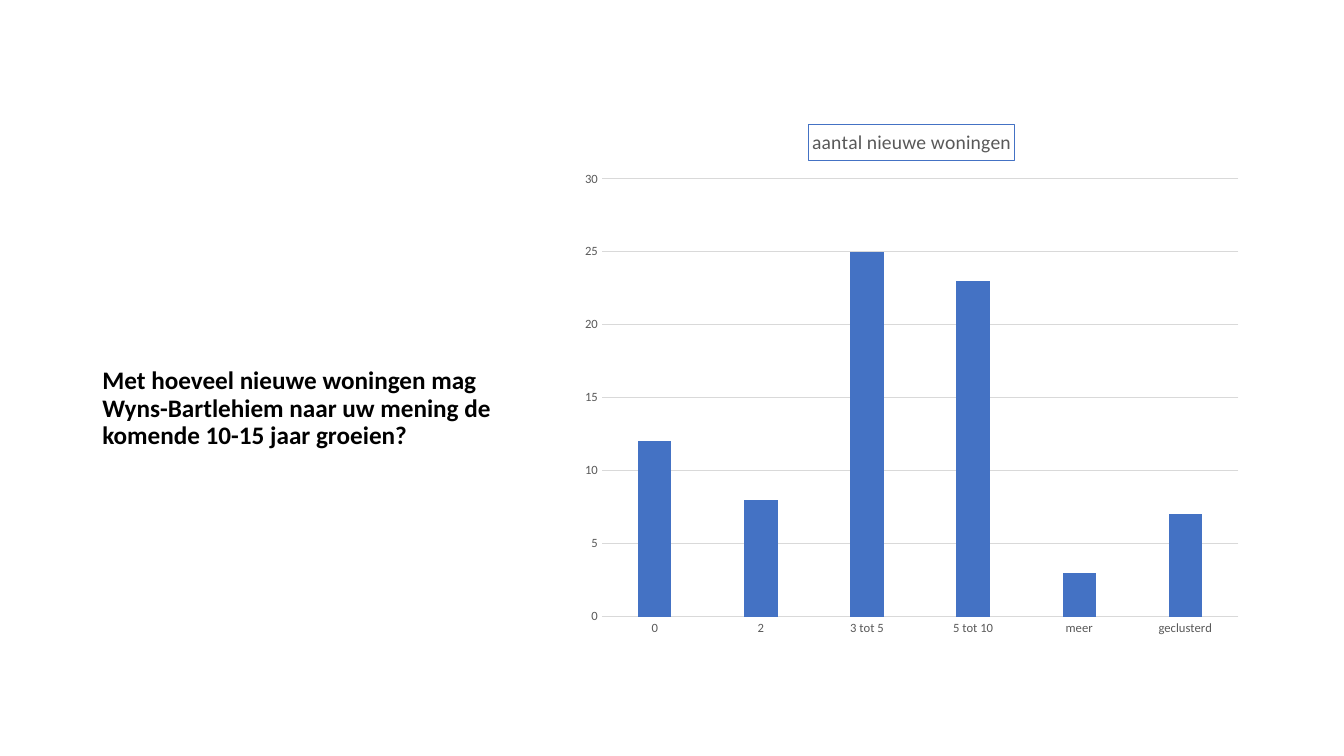
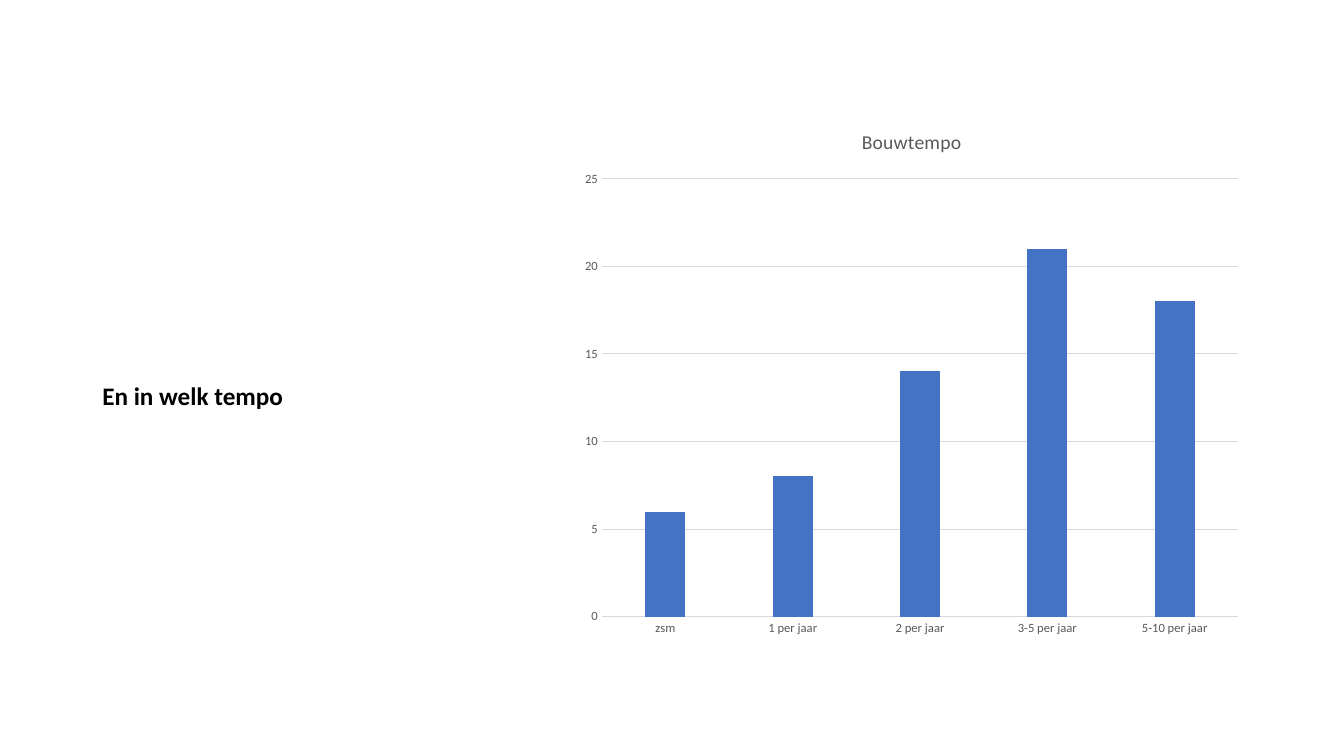
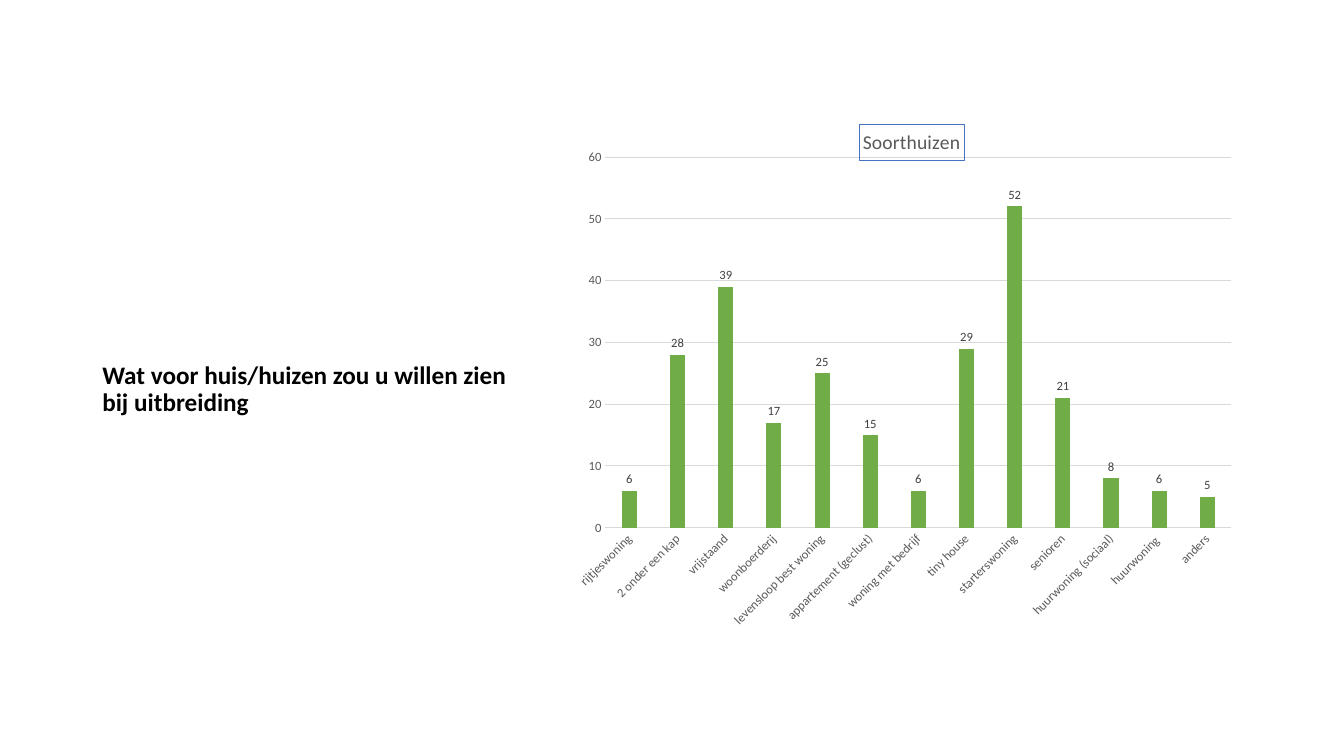
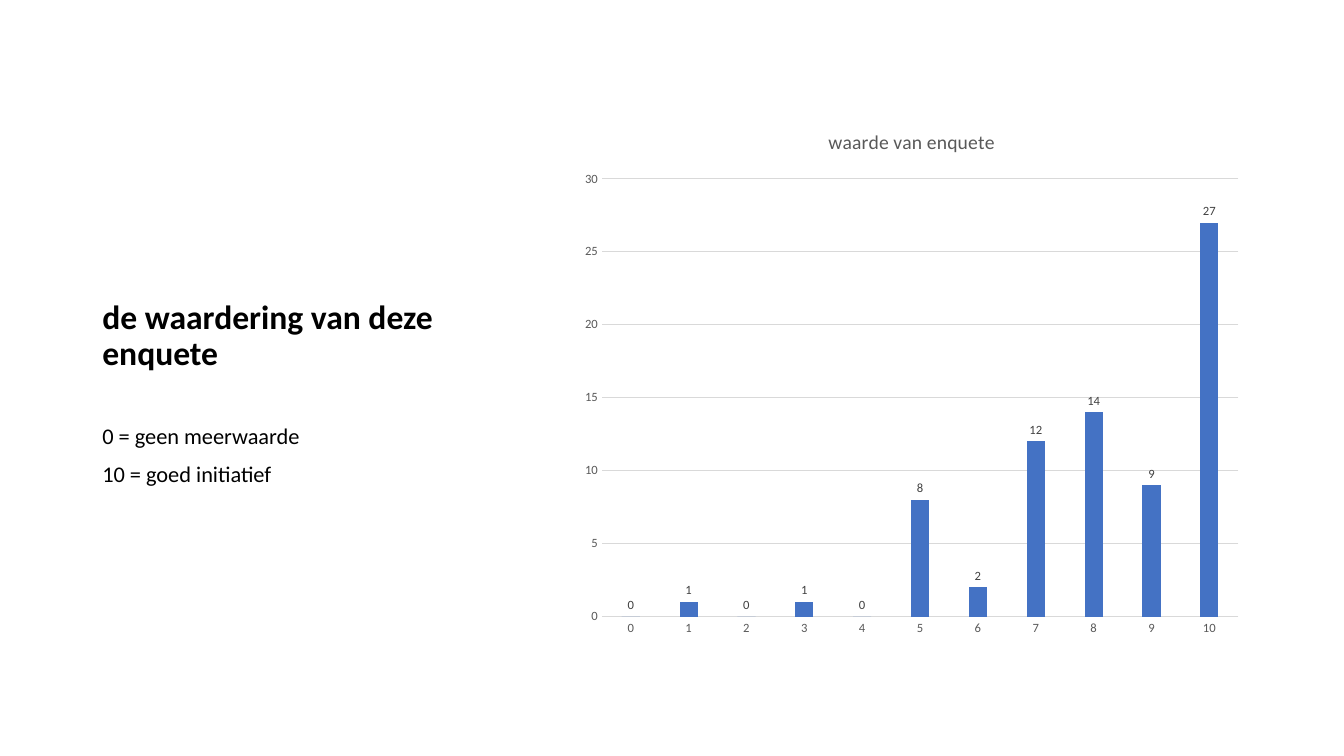
"""Builds four survey result slides, each with a question and a column chart."""
import pptx
import pptx.chart.data
import pptx.dml.color
import pptx.enum.chart
import pptx.enum.text
import pptx.oxml
import pptx.util
from pptx.util import Cm, Pt

BLUE, GREEN = "4472C4", "70AD47"
BLACK, DARK, GREY, PALE = "000000", "404040", "595959", "D9D9D9"
CHART_NS = "http://schemas.openxmlformats.org/drawingml/2006/chart"


def rgb(value):
    return pptx.dml.color.RGBColor.from_string(value)


class Deck:
    FONT = "Calibri"
    LEFT = 2.33
    TEXT_WIDTH = 11.13
    TITLE_TOP = 1.27
    CHART_BOX = (14.4, 2.74, 17.15, 13.54)

    def __init__(self):
        self.prs = pptx.Presentation()
        self.prs.slide_width, self.prs.slide_height = Cm(33.87), Cm(19.05)
        self.s = None

    def slide(self):
        self.s = self.prs.slides.add_slide(self.prs.slide_layouts[6])

    def style(self, font, size, color, bold=False):
        font.name, font.size, font.bold = self.FONT, Pt(size), bold
        font.color.rgb = rgb(color)

    def text(self, lines, top, height, size, bold=False, anchor="TOP", gap=0):
        sp = self.s.shapes.add_textbox(
            Cm(self.LEFT), Cm(top), Cm(self.TEXT_WIDTH), Cm(height))
        tf = sp.text_frame
        tf.word_wrap = True
        tf.vertical_anchor = getattr(pptx.enum.text.MSO_ANCHOR, anchor)
        tf.text = "\n".join(lines)
        for i, p in enumerate(tf.paragraphs):
            p.line_spacing = 0.9
            p.space_before = Pt(gap if i else 0)
            for r in p.runs:
                self.style(r.font, size, BLACK, bold)

    def title(self, text, height, size=18):
        self.text([text], self.TITLE_TOP, height, size, True, "BOTTOM")

    def chart(self, title, values, color=BLUE, boxed=False, labels=False,
              layout=None, rotation=None):
        data = pptx.chart.data.CategoryChartData()
        data.categories = list(values)
        data.add_series("Series 1", list(values.values()))
        chart = self.s.shapes.add_chart(
            pptx.enum.chart.XL_CHART_TYPE.COLUMN_CLUSTERED,
            *map(Cm, self.CHART_BOX), data).chart
        self.style(chart.font, 10, BLACK)
        chart.has_legend = False
        self.chart_title(chart, title, boxed)
        self.axes(chart)
        plot = chart.plots[0]
        plot.gap_width, plot.overlap, plot.vary_by_categories = 219, -27, False
        series = plot.series[0]
        series.invert_if_negative = False
        series.format.fill.solid()
        series.format.fill.fore_color.rgb = rgb(color)
        if labels:
            self.labels(plot)
        if layout:
            self.plot_layout(chart, layout)
        if rotation:
            body = chart.element.xpath("//c:catAx/c:txPr/a:bodyPr")[0]
            body.set("rot", str(rotation * 60000))
            body.set("vert", "horz")

    def chart_title(self, chart, title, boxed):
        chart.has_title = True
        p = chart.chart_title.text_frame.paragraphs[0]
        p.text = title
        self.style(p.runs[0].font, 14, GREY)
        if boxed:
            line = chart.chart_title.format.line
            line.color.rgb = rgb(BLUE)
            line.width = Pt(0.75)

    def axes(self, chart):
        none = pptx.enum.chart.XL_TICK_MARK.NONE
        cat, val = chart.category_axis, chart.value_axis
        for axis in (cat, val):
            axis.major_tick_mark = axis.minor_tick_mark = none
            self.style(axis.tick_labels.font, 9, GREY)
        val.has_major_gridlines = True
        for line in (cat.format.line, val.major_gridlines.format.line):
            line.color.rgb = rgb(PALE)
            line.width = Pt(0.75)
        val.format.line.fill.background()

    def labels(self, plot):
        plot.has_data_labels = True
        labels = plot.data_labels
        labels.show_value = True
        labels.position = pptx.enum.chart.XL_LABEL_POSITION.OUTSIDE_END
        self.style(labels.font, 9, DARK)

    def plot_layout(self, chart, layout):
        area = chart.element.xpath("//c:plotArea")[0]
        for old in area.xpath("c:layout"):
            area.remove(old)
        items = [("layoutTarget", "inner"), ("xMode", "edge"), ("yMode", "edge")]
        items += zip("xywh", layout)
        inner = "".join(f'<c:{tag} val="{val}"/>' for tag, val in items)
        area.insert(0, pptx.oxml.parse_xml(
            f'<c:layout xmlns:c="{CHART_NS}"><c:manualLayout>{inner}'
            "</c:manualLayout></c:layout>"))


def main():
    deck = Deck()

    deck.slide()
    deck.title("Met hoeveel nieuwe woningen mag Wyns-Bartlehiem naar uw mening "
               "de komende 10-15 jaar groeien?", 10.19)
    deck.chart("aantal nieuwe woningen", {
        "0": 12, "2": 8, "3 tot 5": 25, "5 tot 10": 23, "meer": 3,
        "geclusterd": 7}, boxed=True)

    deck.slide()
    deck.title("En in welk tempo", 9.22)
    deck.chart("Bouwtempo", {
        "zsm": 6, "1 per jaar": 8, "2 per jaar": 14, "3-5 per jaar": 21,
        "5-10 per jaar": 18})

    deck.slide()
    deck.title("Wat voor huis/huizen zou u willen zien bij uitbreiding", 9.37)
    deck.chart("Soorthuizen", {
        "rijtjeswoning": 6, "2 onder een kap": 28, "vrijstaand": 39,
        "woonboerderij": 17, "levensloop best woning": 25,
        "appartement (geclust)": 15, "woning met bedrijf": 6, "tiny house": 29,
        "starterswoning": 52, "senioren": 21, "huurwoning (sociaal)": 8,
        "huurwoning ": 6, "anders": 5}, GREEN, boxed=True, labels=True,
        layout=(0.05, 0.09, 0.92, 0.69), rotation=-45)

    deck.slide()
    deck.title("de waardering van deze enquete", 8.26, 24)
    deck.text(["0 = geen meerwaarde", "10 = goed initiatief"],
              10.59, 5.71, 16, gap=10)
    scores = [0, 1, 0, 1, 0, 8, 2, 12, 14, 9, 27]
    deck.chart("waarde van enquete",
               {str(i): n for i, n in enumerate(scores)}, labels=True)

    deck.prs.save("out.pptx")


if __name__ == "__main__":
    main()
